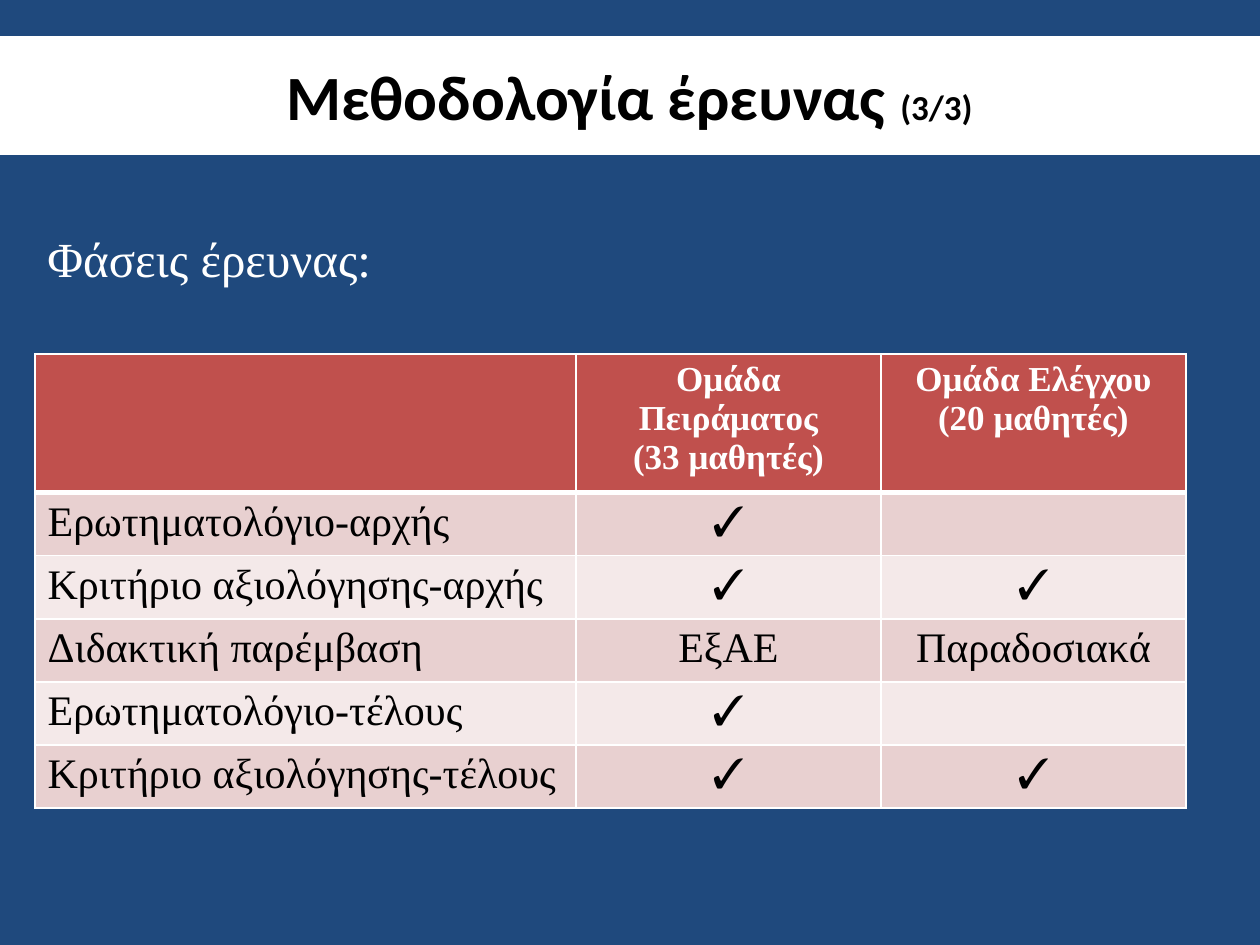
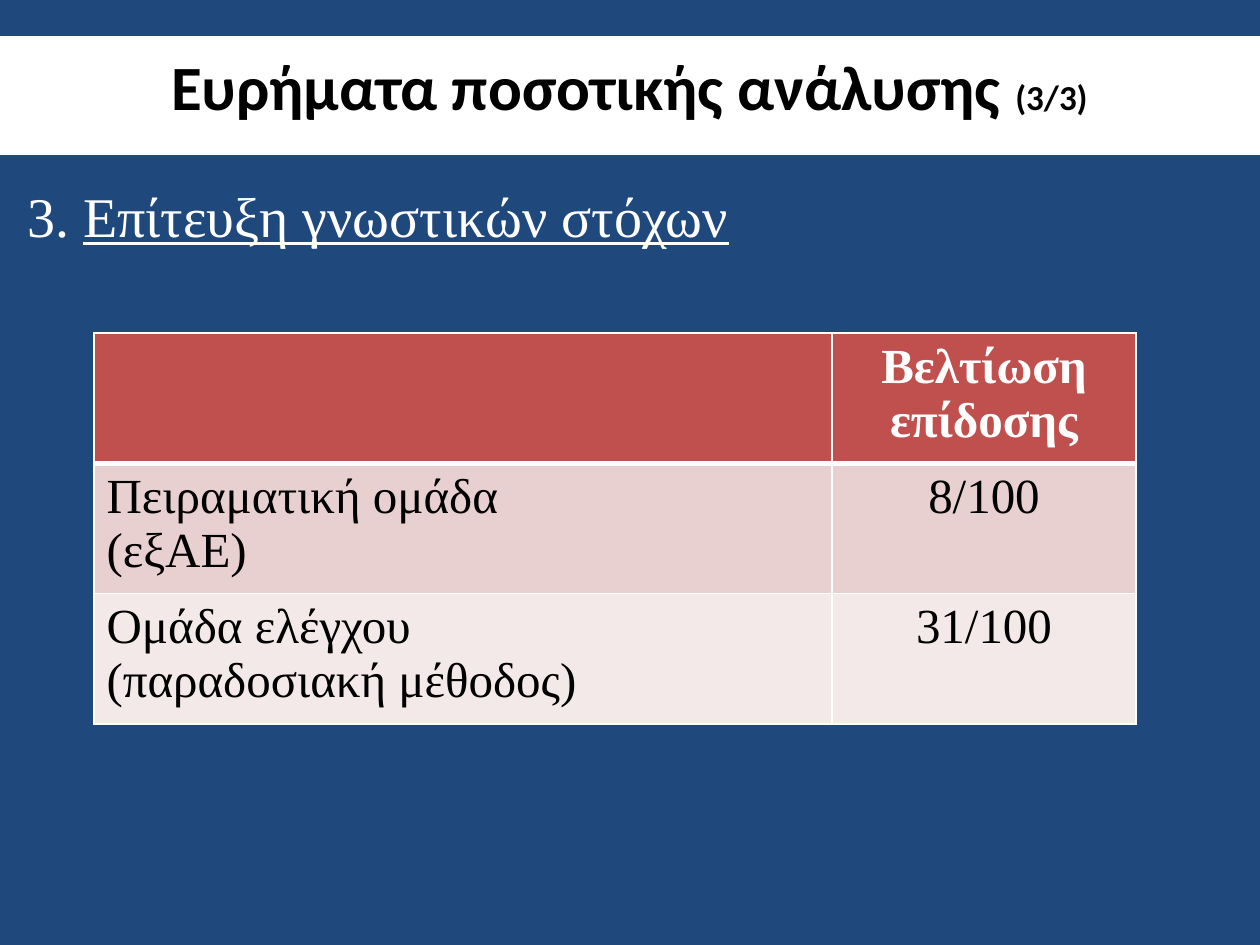
"""Builds two research slides: study phases by group and improvement results."""
from lxml import etree
from pptx import Presentation, util as u
from pptx.dml.color import RGBColor
from pptx.enum import shapes, text
from pptx.oxml.ns import qn

SCALE = 914400 / 126
NAVY, WHITE, BLACK, RED = "1F497D", "FFFFFF", "000000", "C0504D"
BANDS = ["E8D0D0", "F4E9E9"]
SERIF = "Times New Roman"


def px(*lengths):
    return [u.Emu(round(n * SCALE)) for n in lengths]


def write(p, words, size, color=WHITE, font=SERIF, bold=False, underline=False):
    r = p.add_run()
    r.text = words
    f = r.font
    f.size, f.name, f.bold, f.underline = u.Pt(size), font, bold, underline
    f.color.rgb = RGBColor.from_string(color)


slides = [
    dict(title="Μεθοδολογία έρευνας ", title_top=55,
         heading=[("Φάσεις έρευνας:", False)], heading_size=28,
         heading_box=(35, 222, 1191, 72),
         left=35, top=354, cols=[541, 305, 305], rows=[138] + [63] * 5,
         head_size=20, body_size=24,
         cells=[["", "Ομάδα Πειράματος\n(33 μαθητές)", "Ομάδα Ελέγχου\n(20 μαθητές)"],
                ["Ερωτηματολόγιο-αρχής", "✓", ""],
                ["Κριτήριο αξιολόγησης-αρχής", "✓", "✓"],
                ["Διδακτική παρέμβαση", "ΕξΑΕ", "Παραδοσιακά"],
                ["Ερωτηματολόγιο-τέλους", "✓", ""],
                ["Κριτήριο αξιολόγησης-τέλους", "✓", "✓"]]),
    dict(title="Ευρήματα ποσοτικής ανάλυσης ", title_top=45,
         heading=[("3. ", False), ("Επίτευξη γνωστικών στόχων", True)], heading_size=32,
         heading_box=(15, 175, 1201, 335),
         left=94, top=333, cols=[738, 304], rows=[130] * 3,
         head_size=28, body_size=28,
         cells=[["", "Βελτίωση\nεπίδοσης"],
                ["Πειραματική ομάδα\n(εξΑΕ)", "8/100"],
                ["Ομάδα ελέγχου\n(παραδοσιακή μέθοδος)", "31/100"]]),
]

prs = Presentation()
prs.slide_width, prs.slide_height = px(1260, 945)
bg = prs.slide_master.background.fill
bg.solid()
bg.fore_color.rgb = RGBColor.from_string(NAVY)

for d in slides:
    s = prs.slides.add_slide(prs.slide_layouts.get_by_name("Title Only"))

    band = s.shapes.add_shape(shapes.MSO_SHAPE.RECTANGLE, *px(0, 36, 1260, 119))
    band.shadow.inherit = False
    band.fill.solid()
    band.fill.fore_color.rgb = RGBColor.from_string(WHITE)
    band.line.fill.background()
    title = s.shapes.title
    title._element.addprevious(band._element)

    title.left, title.top, title.width, title.height = px(94, d["title_top"], 1071, 80)
    tf = title.text_frame
    tf.auto_size = text.MSO_AUTO_SIZE.NONE
    tf.vertical_anchor = text.MSO_ANCHOR.MIDDLE
    p = tf.paragraphs[0]
    p.alignment = text.PP_ALIGN.CENTER
    write(p, d["title"], 36, color=BLACK, font="Calibri", bold=True)
    write(p, "(3/3)", 20, color=BLACK, font="Calibri", bold=True)

    tf = s.shapes.add_textbox(*px(*d["heading_box"])).text_frame
    tf.word_wrap = True
    for words, underline in d["heading"]:
        write(tf.paragraphs[0], words, d["heading_size"], underline=underline)

    cols, rows = d["cols"], d["rows"]
    table = s.shapes.add_table(len(rows), len(cols),
                               *px(d["left"], d["top"], sum(cols), sum(rows))).table
    for col, width in zip(table.columns, px(*cols)):
        col.width = width
    for row, height in zip(table.rows, px(*rows)):
        row.height = height

    for i, row in enumerate(d["cells"]):
        head = i == 0
        for j, words in enumerate(row):
            cell = table.cell(i, j)
            tcPr = cell._tc.get_or_add_tcPr()
            for side in "LRTB":
                thick = (i, side) in [(0, "B"), (1, "T")]
                ln = etree.SubElement(tcPr, qn(f"a:ln{side}"), w=str(u.Pt(3 if thick else 1)))
                fill = etree.SubElement(ln, qn("a:solidFill"))
                etree.SubElement(fill, qn("a:srgbClr"), val=WHITE)
            cell.fill.solid()
            cell.fill.fore_color.rgb = RGBColor.from_string(RED if head else BANDS[(i - 1) % 2])
            if not words:
                continue
            tf = cell.text_frame
            for k, line in enumerate(words.split("\n")):
                p = tf.add_paragraph() if k else tf.paragraphs[0]
                p.alignment = text.PP_ALIGN.CENTER if j else text.PP_ALIGN.LEFT
                write(p, line, d["head_size"] if head else d["body_size"],
                      color=WHITE if head else BLACK, bold=head)

prs.save("out.pptx")
